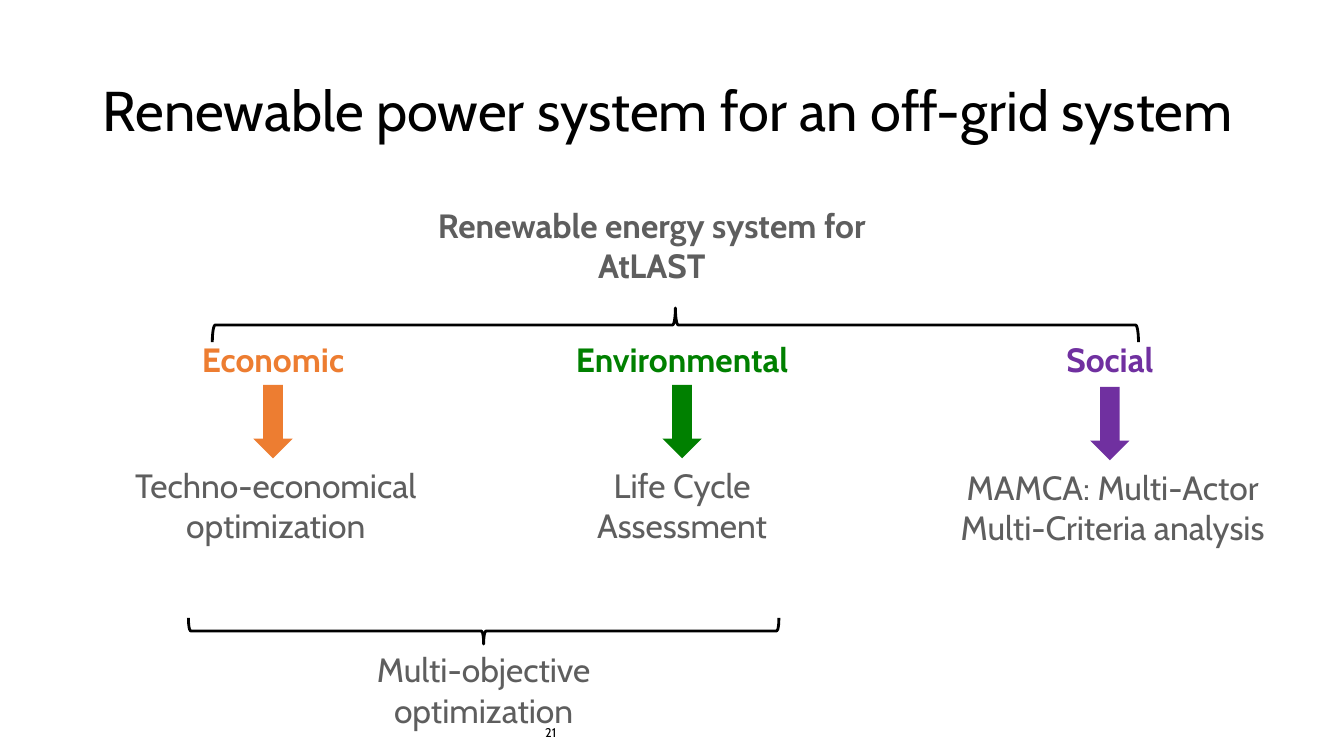
from pptx import Presentation
from pptx.dml.color import RGBColor
from pptx.enum.shapes import MSO_SHAPE
from pptx.enum.text import MSO_ANCHOR, MSO_AUTO_SIZE, PP_ALIGN
from pptx.util import Cm, Pt

TITLE = "Renewable power system for an off-grid system"
HEAD = "Renewable energy system for AtLAST"
GOAL = "Multi-objective optimization"
PAGE = "21"
BLACK, GREY = "000000", "5E5E5E"

# label, colour, method, centre, method centre, method width, drop
PILLARS = [
    ("Economic", "ED7D31", "Techno-economical optimization", 6.88, 6.95, 7.8, 0),
    ("Environmental", "008000", "Life Cycle Assessment", 17.19, 17.19, 7.62, 0),
    ("Social", "7030A0", "MAMCA: Multi-Actor Multi-Criteria analysis", 27.97, 28.04, 8.69, 0.05),
]
# left, top, width, height, turn
BRACES = [
    (16.59, -3.48, 0.86, 23.34, 90),
    (11.86, 8.46, 0.66, 14.88, 270),
]
WIDE, ROW, PAIR = 7.62, 1.32, 2.34
LABEL_TOP, ARROW_TOP, METHOD_TOP = 8.38, 9.7, 11.56
ARROW_W, ARROW_H = 0.99, 1.85


def paint(target, color):
    """Set a colour from a hex string."""
    target.rgb = RGBColor.from_string(color)


def write(slide, text, box, size=24, color=GREY, bold=False, align=PP_ALIGN.CENTER,
          anchor=MSO_ANCHOR.MIDDLE, inset=0.15, wrap=True, grow=True, lines=None):
    """Add a text box in one format."""
    frame = slide.shapes.add_textbox(*map(Cm, box)).text_frame
    frame.word_wrap = wrap
    frame.auto_size = MSO_AUTO_SIZE.SHAPE_TO_FIT_TEXT if grow else MSO_AUTO_SIZE.NONE
    frame.vertical_anchor = anchor
    frame.margin_left = frame.margin_right = Cm(inset)
    frame.margin_top = frame.margin_bottom = Cm(inset)
    para = frame.paragraphs[0]
    para.alignment = align
    para.line_spacing = lines
    run = para.add_run()
    run.text = text
    run.font.name, run.font.size, run.font.bold = "Cabin", Pt(size), bold
    paint(run.font.color, color)


def arrow(slide, mid, top, color):
    """Add a solid down arrow centred on mid."""
    box = (mid - ARROW_W / 2, top, ARROW_W, ARROW_H)
    shape = slide.shapes.add_shape(MSO_SHAPE.DOWN_ARROW, *map(Cm, box))
    shape.shadow.inherit = False
    shape.fill.solid()
    paint(shape.fill.fore_color, color)
    shape.line.fill.background()


def brace(slide, box, turn):
    """Add a turned brace outline."""
    shape = slide.shapes.add_shape(MSO_SHAPE.LEFT_BRACE, *map(Cm, box))
    shape.rotation = turn
    shape.shadow.inherit = False
    shape.fill.background()
    paint(shape.line.color, BLACK)
    shape.line.width = Pt(2)


def main():
    """Build and save the slide."""
    deck = Presentation()
    deck.slide_width, deck.slide_height = Cm(33.87), Cm(19.05)
    slide = deck.slides.add_slide(deck.slide_layouts[6])

    write(slide, TITLE, (2.34, 1.02, 29.21, 3.68), size=40, color=BLACK,
          align=PP_ALIGN.LEFT, inset=0.25, grow=False, lines=0.9)
    write(slide, HEAD, (10.57, 5, 11.71, PAIR), bold=True)
    for label, color, method, mid, center, width, drop in PILLARS:
        write(slide, label, (mid - WIDE / 2, LABEL_TOP, WIDE, ROW), color=color, bold=True)
        arrow(slide, mid, ARROW_TOP + drop, color)
        write(slide, method, (center - width / 2, METHOD_TOP + drop, width, PAIR))
    for *box, turn in BRACES:
        brace(slide, box, turn)
    write(slide, GOAL, (8.38, 16.21, WIDE, PAIR))
    write(slide, PAGE, (13.56, 18.14, 0.64, 0.66), size=9, color=BLACK,
          anchor=MSO_ANCHOR.BOTTOM, wrap=False)
    deck.save("out.pptx")


if __name__ == "__main__":
    main()
